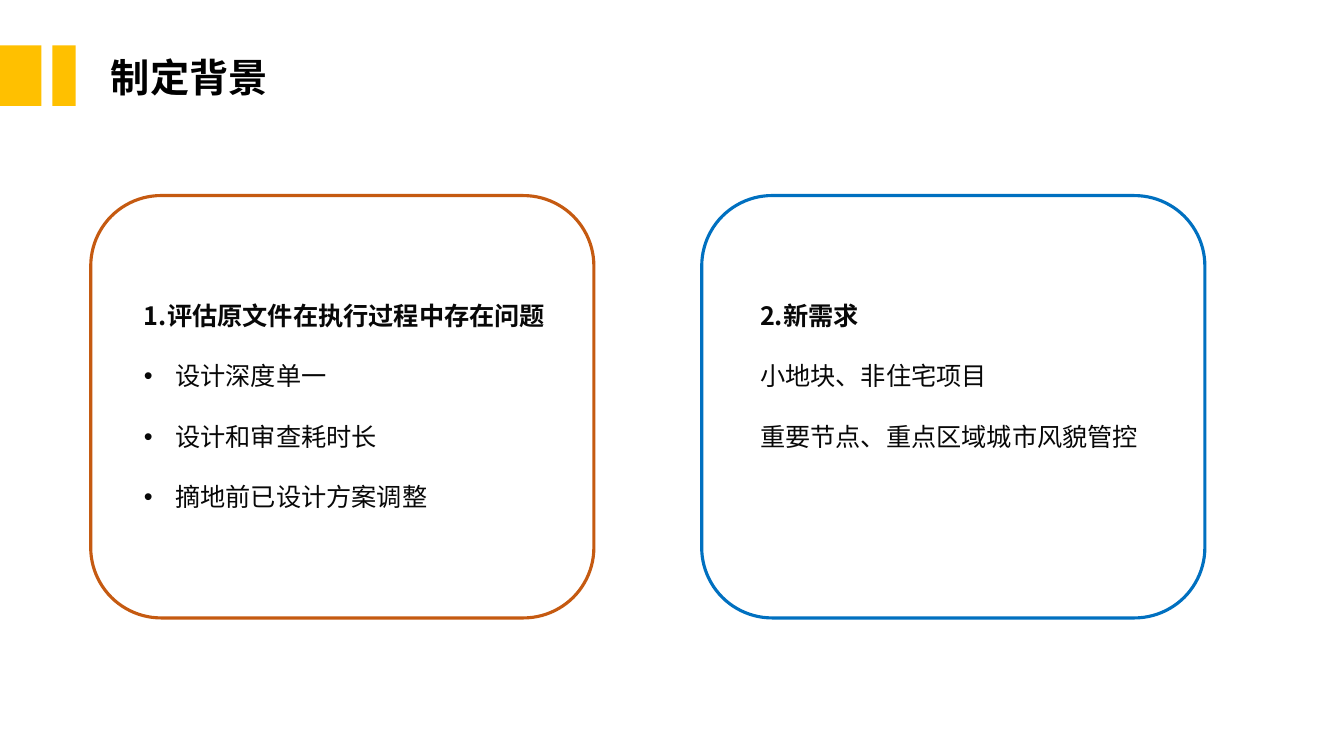
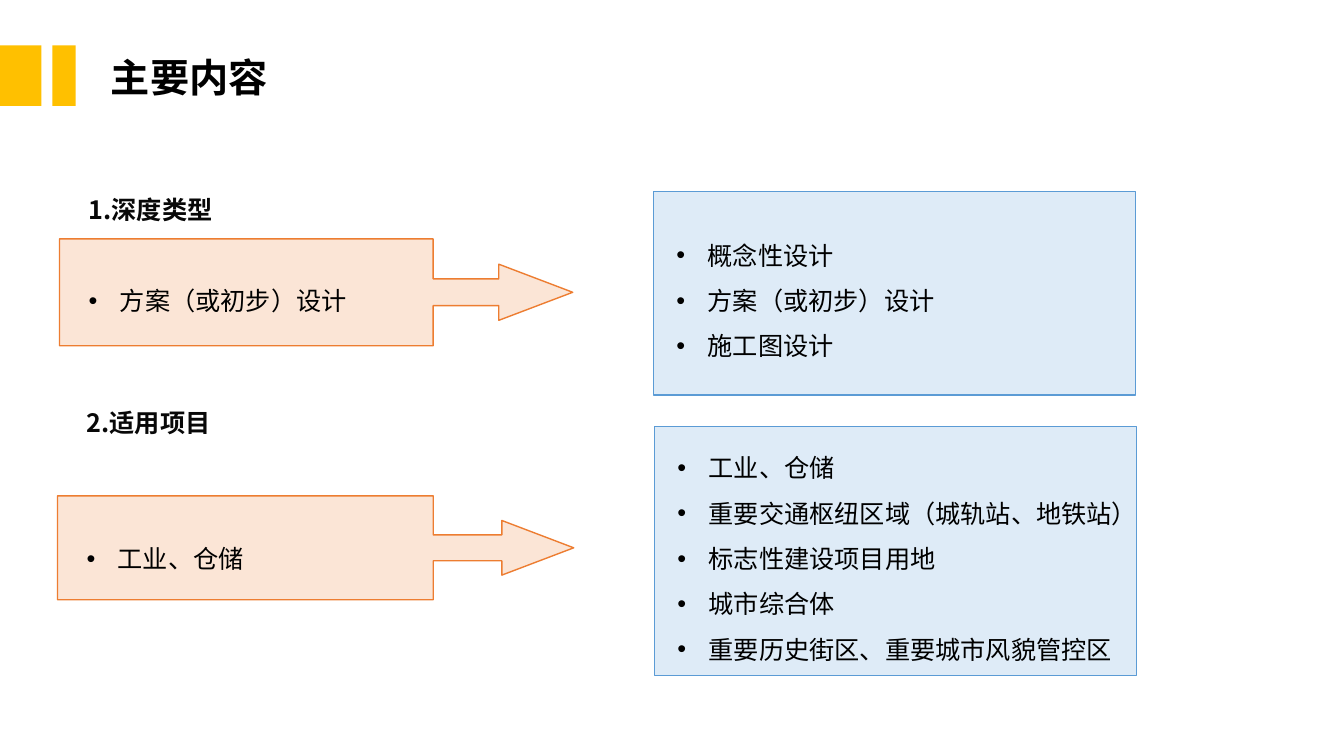
from dataclasses import dataclass

from lxml import etree
from pptx import Presentation
from pptx.dml.color import RGBColor
from pptx.enum.shapes import MSO_SHAPE
from pptx.enum.text import MSO_ANCHOR, MSO_AUTO_SIZE, PP_ALIGN
from pptx.oxml.ns import qn
from pptx.util import Inches, Pt

RECTANGLE = MSO_SHAPE.RECTANGLE
ROUNDED = MSO_SHAPE.ROUNDED_RECTANGLE
CALLOUT = MSO_SHAPE.RIGHT_ARROW_CALLOUT
TOP = MSO_ANCHOR.TOP
MIDDLE = MSO_ANCHOR.MIDDLE
NO_AUTOFIT = MSO_AUTO_SIZE.NONE
LEFT = PP_ALIGN.LEFT
TITLE_ONLY = 5


@dataclass(frozen=True)
class Theme:
    accent: str = "FFC000"
    black: str = "000000"
    ink: str = "080808"
    rust: str = "C55A11"
    blue: str = "0070C0"
    peach: str = "FBE5D6"
    orange: str = "ED7D31"
    pale_blue: str = "DEEBF7"
    sky: str = "5B9BD5"
    title_font: str = "Calibri"
    body_font: str = "Noto Sans CJK SC"
    title_size: float = 28
    body_size: float = 18
    frame_line: float = 2.25
    panel_line: float = 1
    bullet_indent: float = 0.31
    line_pitch: float = 0.45


THEME = Theme()


def add_box(slide, kind, box, fill=None, line=None, weight=THEME.panel_line):
    shape = slide.shapes.add_shape(kind, *map(Inches, box))
    shape.shadow.inherit = False
    if fill:
        shape.fill.solid()
        shape.fill.fore_color.rgb = RGBColor.from_string(fill)
    else:
        shape.fill.background()
    if line:
        shape.line.color.rgb = RGBColor.from_string(line)
        shape.line.width = Pt(weight)
    else:
        shape.line.fill.background()
    return shape


def set_bullet(paragraph):
    properties = paragraph._p.get_or_add_pPr()
    indent = Inches(THEME.bullet_indent)
    properties.set("marL", str(indent))
    properties.set("indent", str(-indent))
    etree.SubElement(properties, qn("a:buFont")).set("typeface", "Arial")
    etree.SubElement(properties, qn("a:buChar")).set("char", "•")


def write(paragraph, text, size=THEME.body_size, color=THEME.ink,
          font=THEME.body_font, bold=False, bullet=False, spacing=None):
    if bullet:
        set_bullet(paragraph)
    paragraph.alignment = LEFT
    if spacing:
        paragraph.line_spacing = spacing
    run = paragraph.add_run()
    run.text = text
    run.font.size = Pt(size)
    run.font.bold = bold
    run.font.color.rgb = RGBColor.from_string(color)
    run.font.name = font
    east_asian = etree.SubElement(run._r.get_or_add_rPr(), qn("a:ea"))
    east_asian.set("typeface", THEME.body_font)


def add_text(slide, box, lines, heading=None, **style):
    frame = slide.shapes.add_textbox(*map(Inches, box)).text_frame
    frame.word_wrap = True
    frame.vertical_anchor = TOP
    entries = [(heading, {**style, "bold": True, "bullet": False})] if heading else []
    entries += [(line, style) for line in lines]
    for index, (text, options) in enumerate(entries):
        paragraph = frame.add_paragraph() if index else frame.paragraphs[0]
        write(paragraph, text, **options)


def add_titled_slide(deck, text):
    slide = deck.slides.add_slide(deck.slide_layouts[TITLE_ONLY])
    for left, width in ((0, 0.41), (0.52, 0.23)):
        add_box(slide, RECTANGLE, (left, 0.45, width, 0.6), fill=THEME.accent)
    title = slide.shapes.title
    title.left, title.top, title.width, title.height = map(
        Inches, (1, 0.48, 10.67, 0.57))
    frame = title.text_frame
    frame.auto_size = NO_AUTOFIT
    frame.vertical_anchor = MIDDLE
    write(frame.paragraphs[0], text, size=THEME.title_size, color=THEME.black,
          font=THEME.title_font, bold=True)
    return slide


def add_reason_card(slide, box, heading, lines, color, inset, bullet=False):
    left, top, width, height = box
    add_text(slide, (left + inset, top + 0.69, width - inset - 0.1, height - 1.6),
             lines, heading=heading, bullet=bullet, spacing=2)
    add_box(slide, ROUNDED, box, line=color, weight=THEME.frame_line)


def add_source_callout(slide, box, heading, heading_top, item, item_line):
    left, top, width, height = box
    callout = add_box(slide, CALLOUT, box, fill=THEME.peach, line=THEME.orange)
    for index, value in enumerate((0.25, 0.263, 0.692, 0.728)):
        callout.adjustments[index] = value
    text_left = left + 0.19
    add_text(slide, (text_left, heading_top, 3.15, 0.55), [],
             heading=heading, spacing=1.5)
    item_top = heading_top + item_line * THEME.line_pitch
    add_text(slide, (text_left, item_top, 3.15, 0.55), [item],
             color=THEME.black, bullet=True, spacing=1.5)


def add_result_panel(slide, box, text_top, lines):
    left, top, width, height = box
    add_box(slide, RECTANGLE, box, fill=THEME.pale_blue, line=THEME.sky)
    text_height = len(lines) * THEME.line_pitch + 0.1
    add_text(slide, (left + 0.13, text_top, width + 0.3, text_height), lines,
             color=THEME.black, bullet=True, spacing=1.5)


def build_background(deck):
    slide = add_titled_slide(deck, "制定背景")
    card_width, card_height = 4.99, 4.19
    add_reason_card(slide, (0.9, 1.94, card_width, card_height),
                    "1.评估原文件在执行过程中存在问题",
                    ["设计深度单一", "设计和审查耗时长", "摘地前已设计方案调整"],
                    THEME.rust, 0.43, bullet=True)
    add_reason_card(slide, (6.96, 1.94, card_width, card_height), "2.新需求",
                    ["小地块、非住宅项目", "重要节点、重点区域城市风貌管控"],
                    THEME.blue, 0.48)


def build_main_content(deck):
    slide = add_titled_slide(deck, "主要内容")
    depth_top, project_top = 1.73, 3.84
    add_source_callout(slide, (0.59, 2.37, 5.09, 1.06), "1.深度类型",
                       depth_top, "方案（或初步）设计", 2)
    add_source_callout(slide, (0.57, 4.92, 5.12, 1.03), "2.适用项目",
                       project_top, "工业、仓储", 3)
    add_result_panel(slide, (6.48, 1.9, 4.78, 2.02), depth_top + THEME.line_pitch,
                     ["概念性设计", "方案（或初步）设计", "施工图设计"])
    add_result_panel(slide, (6.49, 4.23, 4.78, 2.47), project_top + THEME.line_pitch,
                     ["工业、仓储", "重要交通枢纽区域（城轨站、地铁站）",
                      "标志性建设项目用地", "城市综合体",
                      "重要历史街区、重要城市风貌管控区"])


def main():
    deck = Presentation()
    deck.slide_width = Inches(13.33)
    deck.slide_height = Inches(7.5)
    build_background(deck)
    build_main_content(deck)
    deck.save("out.pptx")


if __name__ == "__main__":
    main()
